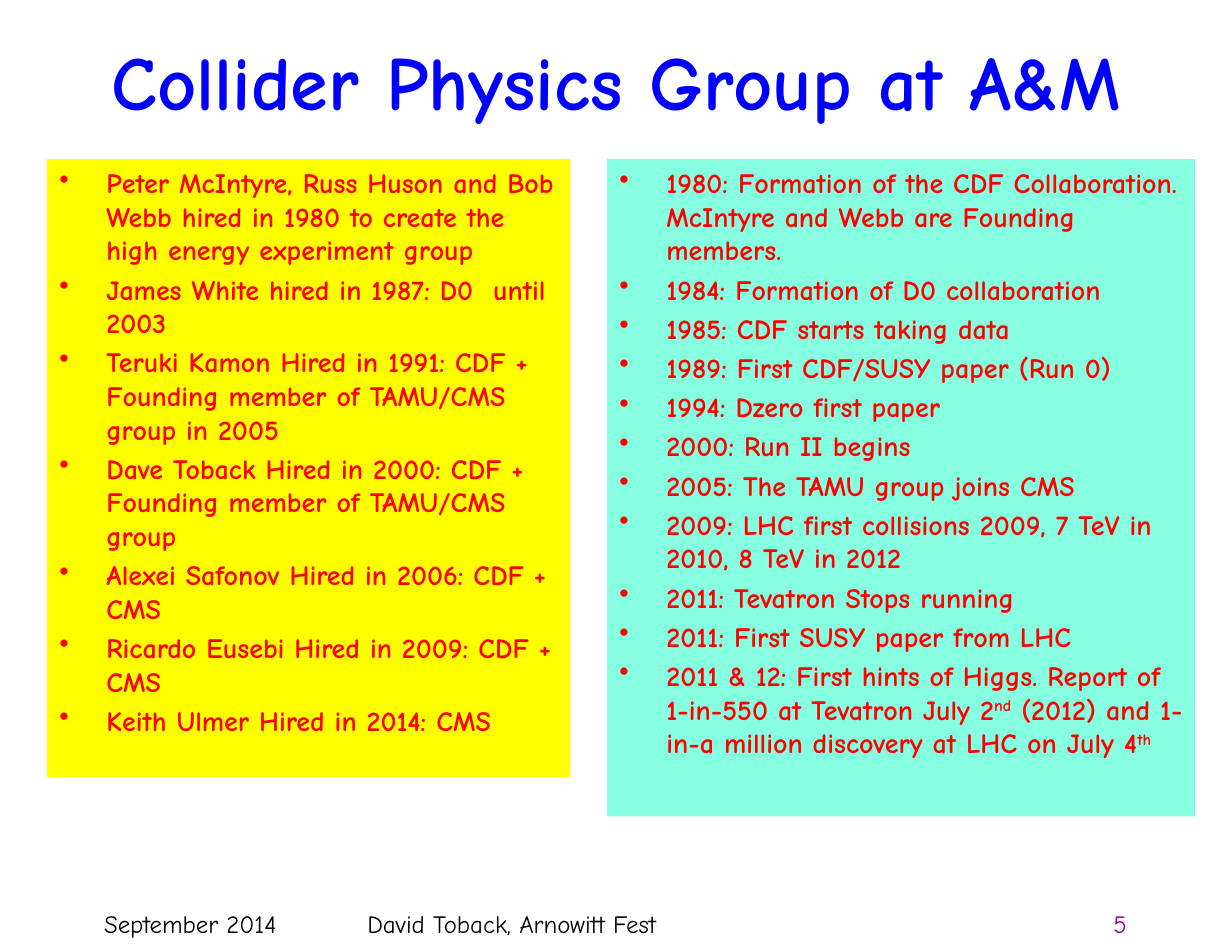
"""Build a slide on the history of a collider physics group."""
import dataclasses
import typing

import pptx
import pptx.dml.color
import pptx.enum.shapes
import pptx.enum.text
import pptx.oxml.ns
import pptx.util
import lxml.etree

Inches = pptx.util.Inches
Align = pptx.enum.text.PP_ALIGN
Anchor = pptx.enum.text.MSO_ANCHOR


@dataclasses.dataclass(frozen=True)
class Theme:
    font: str = "Comic Neue"
    title: str = "0000FF"
    body: str = "FF0000"
    foot: str = "000000"
    page: str = "990099"
    left: str = "FFFF00"
    right: str = "85FFE0"
    title_size: float = 49
    body_size: float = 18
    foot_size: float = 16


@dataclasses.dataclass(frozen=True)
class Label:
    text: str
    box: tuple[float, float, float, float]
    size: float
    color: str
    bold: bool = False
    align: typing.Any = Align.LEFT
    anchor: typing.Any = Anchor.TOP


@dataclasses.dataclass(frozen=True)
class Panel:
    box: tuple[float, float, float, float]
    fill: str
    items: tuple[str, ...]


THEME = Theme()
FOOT_TOP, FOOT_HIGH = 8.05, 0.38
LABELS = (
    Label("Collider Physics Group at A&M", (0, 0, 11, 1.42), THEME.title_size,
          THEME.title, True, Align.CENTER, Anchor.MIDDLE),
    Label("September 2014", (0.82, FOOT_TOP, 2.29, FOOT_HIGH),
          THEME.foot_size, THEME.foot),
    Label("David Toback, Arnowitt Fest", (3.17, FOOT_TOP, 4.75, FOOT_HIGH),
          THEME.foot_size, THEME.foot),
    Label("5", (7.88, FOOT_TOP, 2.29, FOOT_HIGH), THEME.foot_size,
          THEME.page, align=Align.RIGHT),
)
PANELS = (
    Panel((0.42, 1.42, 4.67, 5.52), THEME.left, (
        "Peter McIntyre, Russ Huson and Bob Webb hired in 1980 to create the "
        "high energy experiment group",
        "James White hired in 1987: D0  until 2003",
        "Teruki Kamon Hired in 1991: CDF + Founding member of TAMU/CMS group in 2005",
        "Dave Toback Hired in 2000: CDF + Founding member of TAMU/CMS group",
        "Alexei Safonov Hired in 2006: CDF + CMS",
        "Ricardo Eusebi Hired in 2009: CDF + CMS",
        "Keith Ulmer Hired in 2014: CMS",
    )),
    Panel((5.42, 1.42, 5.25, 5.87), THEME.right, (
        "1980: Formation of the CDF Collaboration. McIntyre and Webb are "
        "Founding members.",
        "1984: Formation of D0 collaboration",
        "1985: CDF starts taking data",
        "1989: First CDF/SUSY paper (Run 0)",
        "1994: Dzero first paper",
        "2000: Run II begins",
        "2005: The TAMU group joins CMS",
        "2009: LHC first collisions 2009, 7 TeV in 2010, 8 TeV in 2012",
        "2011: Tevatron Stops running",
        "2011: First SUSY paper from LHC",
        "2011 & 12: First hints of Higgs. Report of 1-in-550 at Tevatron July "
        "2^nd^ (2012) and 1-in-a million discovery at LHC on July 4^th^",
    )),
)


def rgb(code: str) -> pptx.dml.color.RGBColor:
    return pptx.dml.color.RGBColor.from_string(code)


def apply(thing: typing.Any, values: dict[str, typing.Any]) -> None:
    for name, value in values.items():
        setattr(thing, name, value)


def set_frame(frame: typing.Any, anchor: typing.Any) -> None:
    apply(frame, {
        "word_wrap": True, "vertical_anchor": anchor,
        "margin_left": Inches(0.11), "margin_right": Inches(0.11),
        "margin_top": Inches(0.06), "margin_bottom": Inches(0.06),
    })


def add_run(para: typing.Any, text: str, size: float, color: str,
            bold: bool, raised: bool = False) -> None:
    run = para.add_run()
    run.text = text
    apply(run.font, {"name": THEME.font, "size": pptx.util.Pt(size), "bold": bold})
    run.font.color.rgb = rgb(color)
    if raised:
        run._r.get_or_add_rPr().set("baseline", "30000")


def add_label(slide: typing.Any, label: Label) -> None:
    frame = slide.shapes.add_textbox(*map(Inches, label.box)).text_frame
    set_frame(frame, label.anchor)
    para = frame.paragraphs[0]
    para.alignment = label.align
    add_run(para, label.text, label.size, label.color, label.bold)


def add_bullet(para: typing.Any) -> None:
    props = para._p.get_or_add_pPr()
    indent = Inches(0.42)
    props.set("marL", str(indent))
    props.set("indent", str(-indent))
    mark = lxml.etree.SubElement(props, pptx.oxml.ns.qn("a:buChar"))
    mark.set("char", "•")


def add_panel(slide: typing.Any, panel: Panel) -> None:
    kind = pptx.enum.shapes.MSO_SHAPE.RECTANGLE
    shape = slide.shapes.add_shape(kind, *map(Inches, panel.box))
    shape.shadow.inherit = False
    shape.fill.solid()
    shape.fill.fore_color.rgb = rgb(panel.fill)
    shape.line.fill.background()
    frame = shape.text_frame
    set_frame(frame, Anchor.TOP)
    for order, item in enumerate(panel.items):
        para = frame.add_paragraph() if order else frame.paragraphs[0]
        add_bullet(para)
        para.alignment = Align.LEFT
        para.space_before = pptx.util.Pt(0.2 * THEME.body_size if order else 0)
        for part, text in enumerate(item.split("^")):
            if text:
                add_run(para, text, THEME.body_size, THEME.body, True, part % 2 == 1)


def main() -> None:
    deck = pptx.Presentation()
    apply(deck, {"slide_width": Inches(11), "slide_height": Inches(8.5)})
    slide = deck.slides.add_slide(deck.slide_layouts[6])
    for label in LABELS:
        add_label(slide, label)
    for panel in PANELS:
        add_panel(slide, panel)
    deck.save("out.pptx")


if __name__ == "__main__":
    main()
